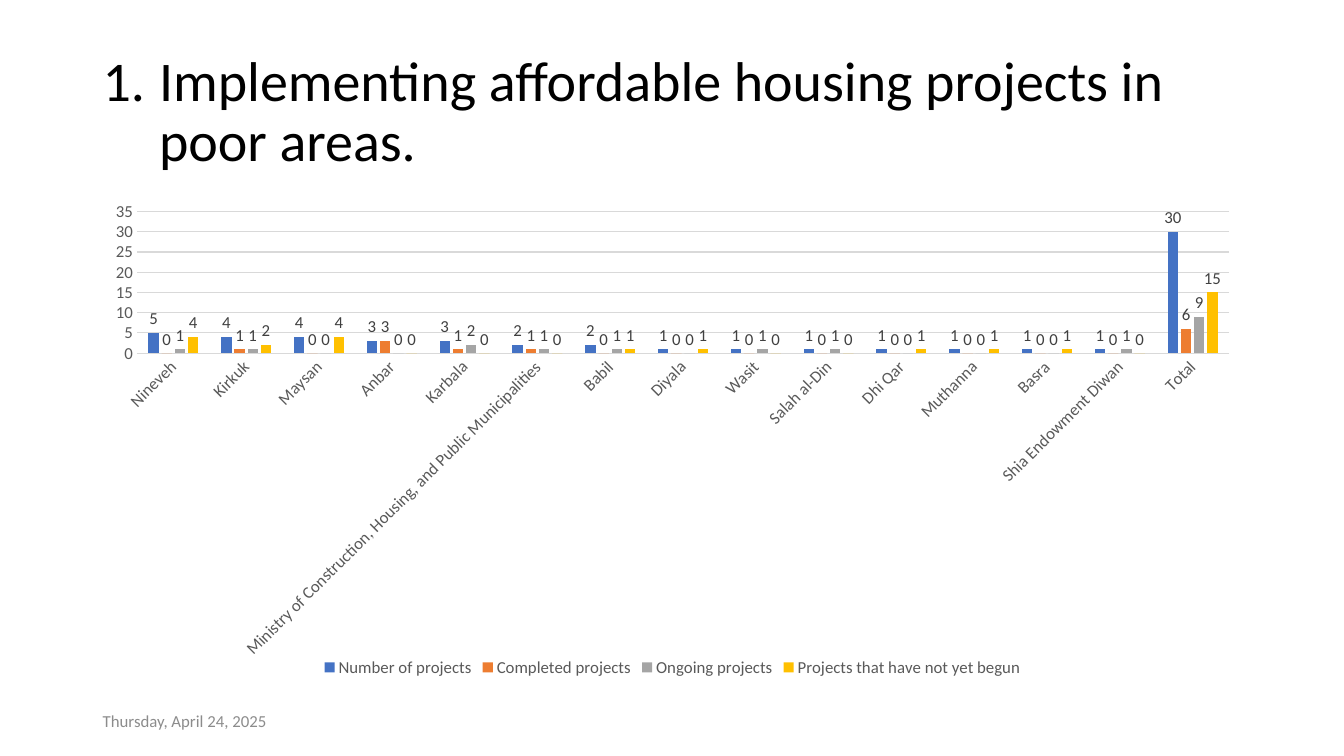
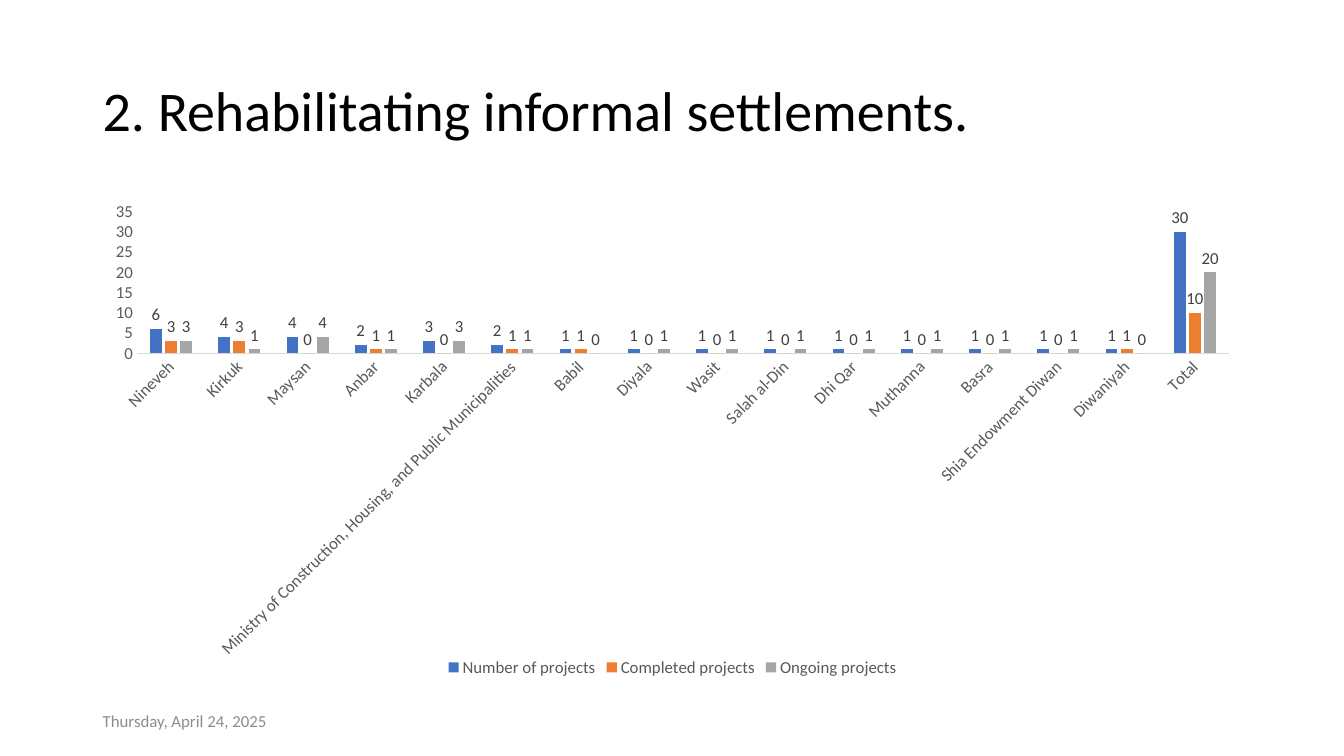
from lxml import etree
from pptx import Presentation
from pptx.chart.data import CategoryChartData
from pptx.dml.color import RGBColor
from pptx.enum.chart import XL_CHART_TYPE, XL_LABEL_POSITION, XL_LEGEND_POSITION, XL_TICK_MARK
from pptx.enum.text import MSO_ANCHOR
from pptx.oxml.ns import qn
from pptx.util import Inches, Pt

# Shared style
COLORS = {
    "title": "000000",
    "footer": "8C8C8C",
    "axis": "595959",
    "label": "404040",
    "rule": "D9D9D9",
    "Number of projects": "4472C4",
    "Completed projects": "ED7D31",
    "Ongoing projects": "A5A5A5",
    "Projects that have not yet begun": "FFC000",
}
FONT = "Calibri"
LEFT, WIDTH = 0.92, 11.5
DATE = "Thursday, April 24, 2025"

# Slide content
PLACES = [
    "Nineveh", "Kirkuk", "Maysan", "Anbar", "Karbala",
    "Ministry of Construction, Housing, and Public Municipalities",
    "Babil", "Diyala", "Wasit", "Salah al-Din", "Dhi Qar", "Muthanna",
    "Basra", "Shia Endowment Diwan",
]
SLIDES = [
    {
        "title": "Implementing affordable housing projects in poor areas.",
        "numbered": True,
        "gridlines": True,
        "categories": PLACES + ["Total"],
        "series": {
            "Number of projects": [5, 4, 4, 3, 3, 2, 2, 1, 1, 1, 1, 1, 1, 1, 30],
            "Completed projects": [0, 1, 0, 3, 1, 1, 0, 0, 0, 0, 0, 0, 0, 0, 6],
            "Ongoing projects": [1, 1, 0, 0, 2, 1, 1, 0, 1, 1, 0, 0, 0, 1, 9],
            "Projects that have not yet begun": [4, 2, 4, 0, 0, 0, 1, 1, 0, 0, 1, 1, 1, 0, 15],
        },
    },
    {
        "title": "2. Rehabilitating informal settlements.",
        "numbered": False,
        "gridlines": False,
        "categories": PLACES + ["Diwaniyah", "Total"],
        "series": {
            "Number of projects": [6, 4, 4, 2, 3, 2, 1, 1, 1, 1, 1, 1, 1, 1, 1, 30],
            "Completed projects": [3, 3, 0, 1, 0, 1, 1, 0, 0, 0, 0, 0, 0, 0, 1, 10],
            "Ongoing projects": [3, 1, 4, 1, 3, 1, 0, 1, 1, 1, 1, 1, 1, 1, 0, 20],
        },
    },
]


def rgb(name):
    return RGBColor.from_string(COLORS[name])


def style_font(font, size, color):
    font.name = FONT
    font.size = Pt(size)
    font.color.rgb = rgb(color)


def style_line(line, color):
    line.color.rgb = rgb(color)
    line.width = Pt(0.75)


def number_paragraph(para, indent):
    """Turn a paragraph into a numbered item with a hanging indent."""
    properties = para._p.get_or_add_pPr()
    properties.set("marL", str(Inches(indent)))
    properties.set("indent", str(-Inches(indent)))
    etree.SubElement(properties, qn("a:buFont"), typeface=FONT)
    etree.SubElement(properties, qn("a:buAutoNum"), type="arabicPeriod")


def add_text(page, text, top, width, height, *, size, color, spacing=None, numbered=False):
    box = page.shapes.add_textbox(Inches(LEFT), Inches(top), Inches(width), Inches(height))
    frame = box.text_frame
    frame.word_wrap = True
    frame.vertical_anchor = MSO_ANCHOR.MIDDLE
    para = frame.paragraphs[0]
    if spacing:
        para.line_spacing = spacing
    if numbered:
        number_paragraph(para, 0.56)
    span = para.add_run()
    span.text = text
    style_font(span.font, size, color)
    return box


def style_axes(chart, gridlines):
    for axis in (chart.category_axis, chart.value_axis):
        axis.major_tick_mark = XL_TICK_MARK.NONE
        axis.minor_tick_mark = XL_TICK_MARK.NONE
        style_font(axis.tick_labels.font, 12, "axis")

    # Slanted category names
    names = chart.category_axis
    style_line(names.format.line, "rule")
    names._element.find(qn("c:txPr")).find(qn("a:bodyPr")).set("rot", str(-45 * 60000))

    values = chart.value_axis
    values.minimum_scale, values.maximum_scale, values.major_unit = 0, 35, 5
    values.format.line.fill.background()
    values.has_major_gridlines = gridlines
    if gridlines:
        style_line(values.major_gridlines.format.line, "rule")


def style_series(series):
    series.format.fill.solid()
    series.format.fill.fore_color.rgb = rgb(series.name)
    series.invert_if_negative = False
    labels = series.data_labels
    labels.show_value = True
    labels.position = XL_LABEL_POSITION.OUTSIDE_END
    style_font(labels.font, 12, "label")


def add_column_chart(page, categories, series_values, gridlines):
    data = CategoryChartData(number_format="General")
    data.categories = categories
    for name, values in series_values.items():
        data.add_series(name, values)
    chart = page.shapes.add_chart(
        XL_CHART_TYPE.COLUMN_CLUSTERED,
        Inches(LEFT), Inches(2), Inches(WIDTH), Inches(4.76), data,
    ).chart
    chart.has_title = False
    style_font(chart.font, 10, "title")
    style_axes(chart, gridlines)

    plot = chart.plots[0]
    plot.vary_by_categories = False
    plot.gap_width, plot.overlap = 219, -27
    for series in plot.series:
        style_series(series)

    chart.has_legend = True
    chart.legend.position = XL_LEGEND_POSITION.BOTTOM
    chart.legend.include_in_layout = False
    style_font(chart.legend.font, 12, "axis")


def add_page(deck, content):
    page = deck.slides.add_slide(deck.slide_layouts[6])
    add_text(page, content["title"], 0.4, WIDTH, 1.45, size=40, color="title",
             spacing=0.9, numbered=content["numbered"])
    add_column_chart(page, content["categories"], content["series"], content["gridlines"])
    add_text(page, DATE, 6.95, 3, 0.4, size=12, color="footer")


def main():
    deck = Presentation()
    deck.slide_width, deck.slide_height = Inches(13.33), Inches(7.5)
    for content in SLIDES:
        add_page(deck, content)
    deck.save("out.pptx")


if __name__ == "__main__":
    main()
